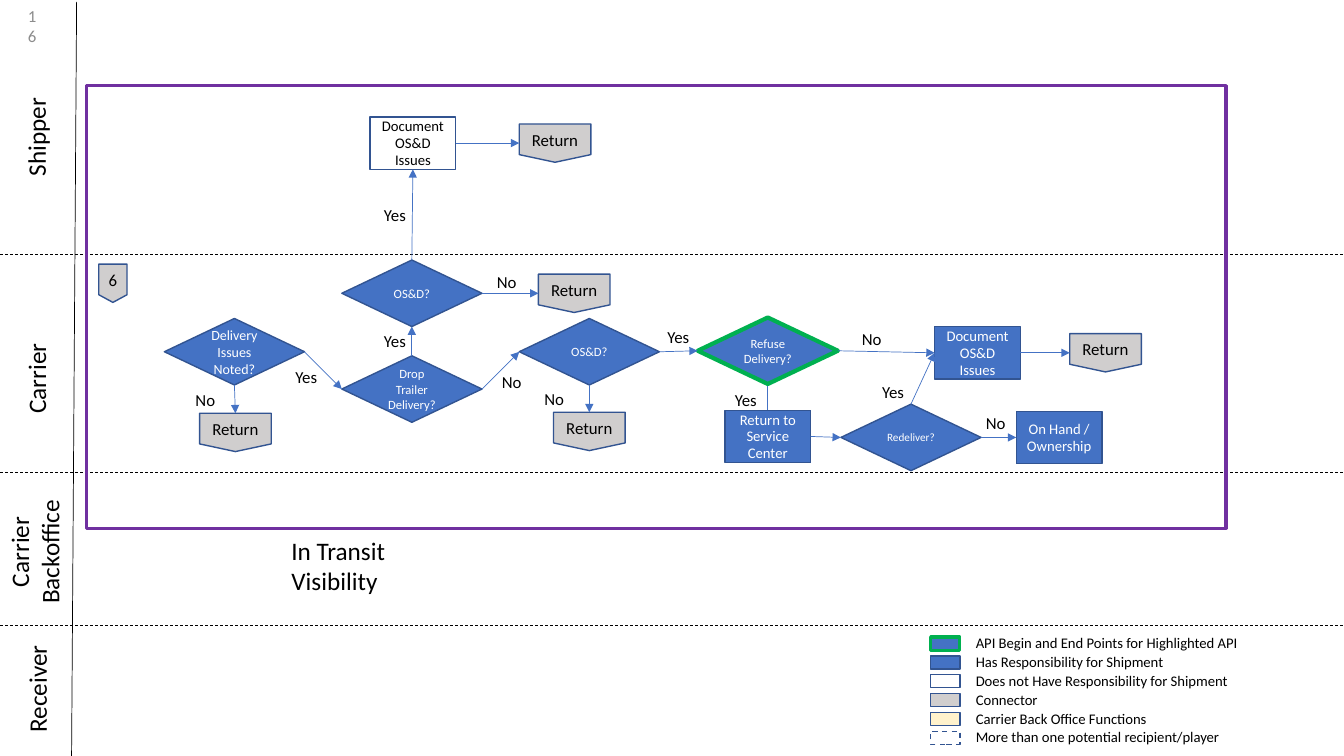
import pptx
import pptx.dml.color
import pptx.enum.dml
import pptx.enum.shapes
import pptx.enum.text
import pptx.oxml
import pptx.oxml.ns
import pptx.util

Inches, Pt = pptx.util.Inches, pptx.util.Pt
SHAPE = pptx.enum.shapes.MSO_SHAPE
ALIGN = pptx.enum.text.PP_ALIGN
ANCHOR = pptx.enum.text.MSO_ANCHOR
STRAIGHT = pptx.enum.shapes.MSO_CONNECTOR.STRAIGHT

COLORS = {
    "black": "000000", "white": "FFFFFF", "number": "8C8C8C",
    "blue": "4472C4", "outline": "325491", "green": "00B050",
    "grey": "D0CECE", "cream": "FFF2CC", "purple": "7030A0",
}
TOP, LEFT, BOTTOM, RIGHT = range(4)

# kind: preset shape, width, height, fill, text colour, text size, line spacing
KINDS = {
    "decision": (SHAPE.FLOWCHART_DECISION, 1.39, 0.66, "blue", "white", 9, None),
    "step": (SHAPE.FLOWCHART_PROCESS, 0.85, 0.52, "blue", "white", 10.5, 12),
    "shipper step": (SHAPE.FLOWCHART_PROCESS, 0.85, 0.52, None, "black", 10.5, 12),
    "return": (SHAPE.FLOWCHART_OFFPAGE_CONNECTOR, 0.71, 0.38, "grey", "black", 12, None),
    "entry": (SHAPE.FLOWCHART_OFFPAGE_CONNECTOR, 0.28, 0.38, "grey", "black", 12, None),
}
# key: kind, text, left and top within the frame, special formats
NODES = {
    "entry": ("entry", "6", 0.12, 1.77, {}),
    "issues": ("decision", "Delivery Issues Noted?", 0.77, 2.31, {"size": 10}),
    "issues return": ("return", "Return", 1.12, 3.25, {}),
    "drop": ("decision", "Drop Trailer Delivery?", 2.53, 2.68, {}),
    "drop osd": ("decision", "OS&D?", 2.53, 1.73, {}),
    "drop osd return": ("return", "Return", 4.48, 1.87, {}),
    "shipper document": ("shipper step", "Document OS&D Issues", 2.81, 0.31, {}),
    "shipper return": ("return", "Return", 4.29, 0.38, {}),
    "osd": ("decision", "OS&D?", 4.29, 2.31, {}),
    "osd return": ("return", "Return", 4.63, 3.24, {}),
    "refuse": ("decision", "Refuse Delivery?", 6.06, 2.3, {"line": "green", "weight": 3}),
    "service": ("step", "Return to Service Center", 6.33, 3.22, {}),
    "redeliver": ("decision", "Redeliver?", 7.48, 3.16, {"size": 8}),
    "on hand": ("step", "On Hand / Ownership", 9.22, 3.23, {}),
    "document": ("step", "Document OS&D Issues", 8.41, 2.39, {}),
    "document return": ("return", "Return", 9.75, 2.46, {}),
}
FLOWS = [
    ("issues", RIGHT, "drop", LEFT), ("issues", BOTTOM, "issues return", TOP),
    ("drop", TOP, "drop osd", BOTTOM), ("drop", RIGHT, "osd", LEFT),
    ("drop osd", TOP, "shipper document", BOTTOM),
    ("drop osd", RIGHT, "drop osd return", LEFT),
    ("shipper document", RIGHT, "shipper return", LEFT),
    ("osd", RIGHT, "refuse", LEFT), ("osd", BOTTOM, "osd return", TOP),
    ("refuse", RIGHT, "document", LEFT), ("service", RIGHT, "redeliver", LEFT),
    ("redeliver", TOP, "document", LEFT), ("redeliver", RIGHT, "on hand", LEFT),
    ("document", RIGHT, "document return", LEFT),
]
# answer: width, then left and top of each label within the frame
ANSWERS = {
    "Yes": (0.42, [(1.97, 2.74), (5.66, 2.34), (6.33, 2.97), (7.79, 2.89),
                   (2.85, 2.38), (2.85, 1.13)]),
    "No": (0.4, [(0.98, 2.97), (4.02, 2.79), (4.44, 2.96), (7.59, 2.36),
                 (8.82, 3.2), (3.97, 1.8)]),
}
LANES = [
    ("Shipper", -0.14, 1.15, 0.99, 0.4), ("Carrier", -0.14, 3.5, 1, 0.4),
    ("Carrier Backoffice", -0.32, 5.12, 1.33, 0.71),
    ("Receiver", -0.2, 6.6, 1.13, 0.4),
]
LEGEND = [
    ("API Begin and End Points for Highlighted API", "blue", {"line": "green", "weight": 2.25}),
    ("Has Responsibility for Shipment", "blue", {}),
    ("Does not Have Responsibility for Shipment", "white", {}),
    ("Connector", "grey", {}),
    ("Carrier Back Office Functions", "cream", {}),
    ("More than one potential recipient/player", None, {"dashed": True}),
]


def rgb(name):
    return pptx.dml.color.RGBColor.from_string(COLORS[name])


def write(shape, text, size=12, color="black", align=ALIGN.LEFT,
          anchor=ANCHOR.TOP, wrap=True, spacing=None):
    frame = shape.text_frame
    frame.word_wrap = wrap
    frame.vertical_anchor = anchor
    frame.text = text
    paragraph = frame.paragraphs[0]
    paragraph.alignment = align
    if spacing:
        paragraph.line_spacing = Pt(spacing)
    font = paragraph.runs[0].font
    font.name, font.size, font.color.rgb = "Calibri", Pt(size), rgb(color)


def label(shapes, text, left, top, width, height, **text_format):
    box = shapes.add_textbox(Inches(left), Inches(top), Inches(width), Inches(height))
    write(box, text, **text_format)
    return box


def outline(item, color, weight, dashed=False):
    item.line.color.rgb = rgb(color)
    item.line.width = Pt(weight)
    if dashed:
        item.line.dash_style = pptx.enum.dml.MSO_LINE.DASH


def block(shapes, preset, left, top, width, height, fill=None,
          line="outline", weight=1, dashed=False):
    shape = shapes.add_shape(preset, Inches(left), Inches(top), Inches(width), Inches(height))
    shape.shadow.inherit = False
    if fill:
        shape.fill.solid()
        shape.fill.fore_color.rgb = rgb(fill)
    else:
        shape.fill.background()
    outline(shape, line, weight, dashed)
    return shape


def connect(shapes, x1, y1, x2, y2, color="black", dashed=False, arrow=False):
    connector = shapes.add_connector(STRAIGHT, Inches(x1), Inches(y1), Inches(x2), Inches(y2))
    outline(connector, color, 0.5, dashed)
    if arrow:
        head = pptx.oxml.parse_xml(
            f'<a:tailEnd {pptx.oxml.ns.nsdecls("a")} type="triangle"/>')
        connector.line._get_or_add_ln().append(head)
    connector._element.spPr.append(
        pptx.oxml.parse_xml(f'<a:effectLst {pptx.oxml.ns.nsdecls("a")}/>'))
    return connector


def swimlanes(shapes, width, height):
    for y in (2.52, 4.69, 6.2):
        connect(shapes, 0, y, width, y, dashed=True)
    connect(shapes, 0.76, 0.02, 0.71, height)
    for name, *box in LANES:
        lane = label(shapes, name, *box, size=18,
                     align=ALIGN.CENTER if " " in name else ALIGN.LEFT)
        lane.rotation = 270


def flowchart(shapes, left, top, width, height):
    # The arrow into the service center ends behind its box
    connect(shapes, left + 6.75, top + 2.97, left + 6.75, top + 3.35, "blue", arrow=True)
    nodes = {}
    for key, (kind, text, dx, dy, special) in NODES.items():
        preset, node_width, node_height, fill, color, size, spacing = KINDS[kind]
        border = dict(special)
        size = border.pop("size", size)
        nodes[key] = block(shapes, preset, left + dx, top + dy,
                           node_width, node_height, fill, **border)
        write(nodes[key], text, size=size, color=color, spacing=spacing,
              align=ALIGN.CENTER, anchor=ANCHOR.MIDDLE)
    for source, exit_side, target, entry_side in FLOWS:
        flow = connect(shapes, left, top, left, top, "blue", arrow=True)
        flow.begin_connect(nodes[source], exit_side)
        flow.end_connect(nodes[target], entry_side)
    for answer, (answer_width, places) in ANSWERS.items():
        for dx, dy in places:
            label(shapes, answer, left + dx, top + dy, answer_width, 0.3, wrap=False)
    block(shapes, SHAPE.RECTANGLE, left, top, width, height, line="purple", weight=2.25)


def legend(shapes, left, top, width, pitch):
    entries = shapes.add_group_shape().shapes
    for row, (meaning, fill, border) in enumerate(LEGEND):
        y = top + row * pitch
        block(entries, SHAPE.RECTANGLE, left, y + 0.08, 0.29, 0.13, fill, **border)
        label(entries, meaning, left + 0.35, y, width - 0.35, 0.28, size=10.5)


def heading(title, left, top, width, height):
    title.left, title.top = Inches(left), Inches(top)
    title.width, title.height = Inches(width), Inches(height)
    write(title, "In Transit Visibility", size=18)
    title.text_frame.auto_size = pptx.enum.text.MSO_AUTO_SIZE.NONE


def main():
    deck = pptx.Presentation()
    width, height = 13.33, 7.5
    deck.slide_width, deck.slide_height = Inches(width), Inches(height)
    slide = deck.slides.add_slide(deck.slide_layouts[5])
    shapes = slide.shapes
    swimlanes(shapes, width, height)
    flowchart(shapes, 0.86, 0.85, 11.3, 4.39)
    heading(shapes.title, 2.79, 5.26, 1.35, 0.71)
    legend(shapes, 9.23, 6.24, 3.35, 0.187)
    label(shapes, "16", 0.16, 0.06, 0.3, 0.4, color="number",
          align=ALIGN.RIGHT, anchor=ANCHOR.MIDDLE)
    deck.save("out.pptx")


if __name__ == "__main__":
    main()
